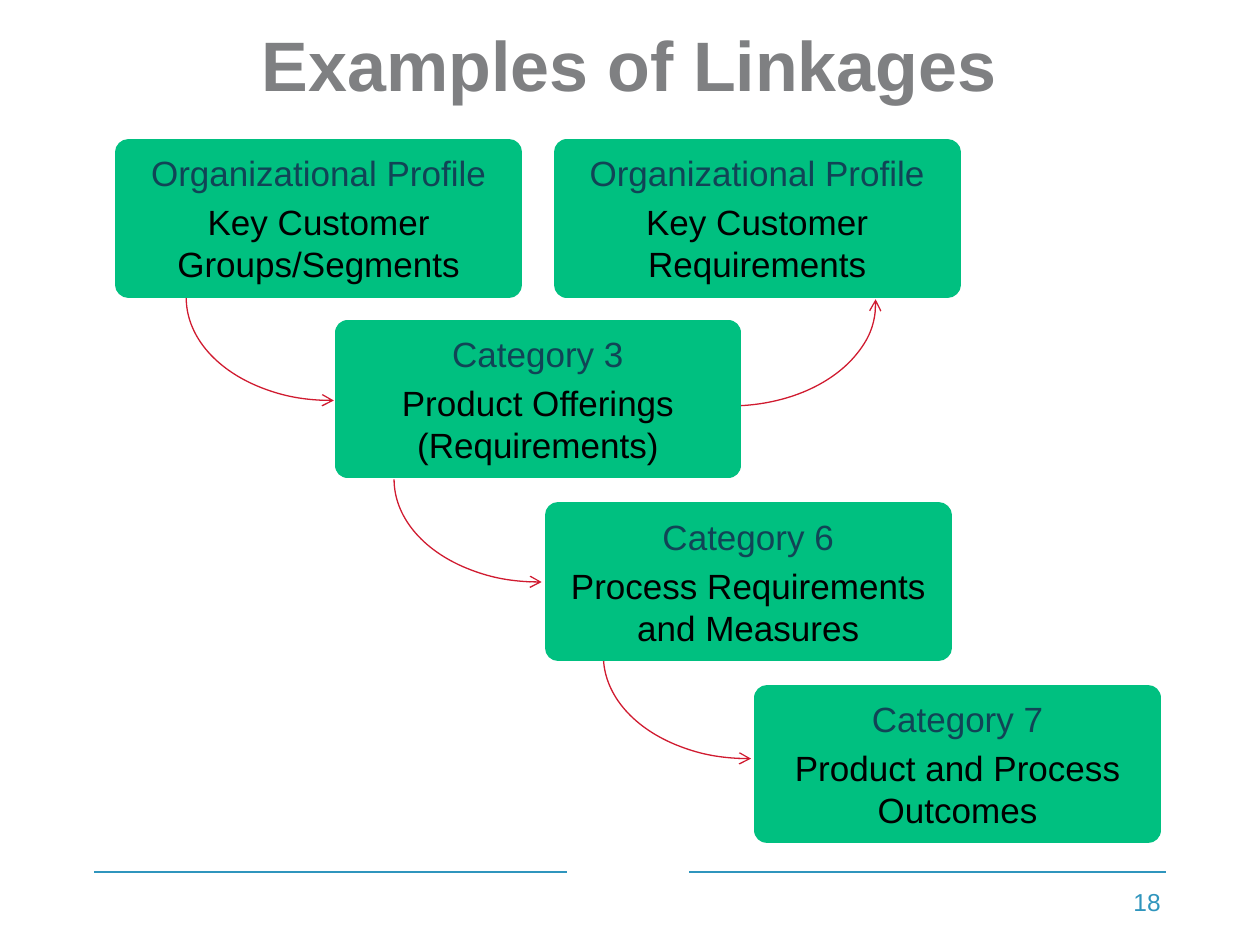
from lxml import etree
from pptx import Presentation
from pptx.dml.color import RGBColor
from pptx.enum.shapes import MSO_CONNECTOR, MSO_SHAPE
from pptx.enum.text import MSO_ANCHOR, PP_ALIGN
from pptx.oxml.ns import qn
from pptx.util import Cm, Pt

RECTANGLE = MSO_SHAPE.RECTANGLE
ARC = MSO_SHAPE.ARC
STRAIGHT = MSO_CONNECTOR.STRAIGHT
CENTER, RIGHT = PP_ALIGN.CENTER, PP_ALIGN.RIGHT
MIDDLE, BOTTOM = MSO_ANCHOR.MIDDLE, MSO_ANCHOR.BOTTOM

GRAY = RGBColor(0x7F, 0x80, 0x82)
GREEN = RGBColor(0x00, 0xC0, 0x80)
NAVY = RGBColor(0x11, 0x44, 0x56)
BLACK = RGBColor(0x00, 0x00, 0x00)
RED = RGBColor(0xD0, 0x1B, 0x30)
BLUE = RGBColor(0x2F, 0x95, 0xBD)

BOX_SIZE = Cm(7.67), Cm(2.67)
ARC_SIZE = Cm(4.14), Cm(5.87)

STAGES = [
    (2.59, 3.07, "Organizational Profile", "Key Customer Groups/Segments"),
    (11.43, 3.07, "Organizational Profile", "Key Customer Requirements"),
    (7.01, 6.71, "Category 3", "Product Offerings (Requirements)"),
    (11.25, 10.39, "Category 6", "Process Requirements and Measures"),
    (15.47, 14.07, "Category 7", "Product and Process Outcomes"),
]
FORWARD_LINKS = [(4.62, 3.07), (8.81, 6.73), (13.03, 10.29)]
FOOTER_RULES = [(1.9, 11.43), (13.89, 23.5)]


def write(paragraph, text, *, size=20, color=BLACK, bold=False,
          align=CENTER, before=None):
    paragraph.alignment = align
    if before is not None:
        paragraph.space_before = Pt(before)
    run = paragraph.add_run()
    run.text = text
    run.font.name = "Arial"
    run.font.size = Pt(size)
    run.font.bold = bold
    run.font.color.rgb = color


class LinkageSlide:
    def __init__(self, deck):
        self.slide = deck.slides.add_slide(deck.slide_layouts[5])
        self.shapes = self.slide.shapes

    def title(self, text):
        heading = self.shapes.title
        heading.left, heading.top = Cm(1.24), Cm(0.43)
        heading.width, heading.height = Cm(22.89), Cm(1.83)
        heading.text_frame.vertical_anchor = BOTTOM
        write(heading.text_frame.paragraphs[0], text,
              size=40, color=GRAY, bold=True)

    def stage(self, left, top, source, topic):
        box = self.shapes.add_shape(RECTANGLE, Cm(left), Cm(top), *BOX_SIZE)
        box.shadow.inherit = False
        box.fill.solid()
        box.fill.fore_color.rgb = GREEN
        box.line.color.rgb = GREEN
        box.line.width = Pt(15)
        etree.SubElement(box.line._get_or_add_ln(), qn("a:round"))
        frame = box.text_frame
        frame.word_wrap = True
        frame.vertical_anchor = MIDDLE
        frame.margin_left = frame.margin_right = Cm(0.1)
        write(frame.paragraphs[0], source, color=NAVY)
        write(frame.add_paragraph(), topic, before=4)

    def link(self, left, top, *, rotation, flips, arrow_end, angles):
        curve = self.shapes.add_shape(ARC, Cm(left), Cm(top), *ARC_SIZE)
        curve.shadow.inherit = False
        curve.fill.background()
        curve.rotation = rotation
        for index, angle in enumerate(angles):
            curve.adjustments[index] = angle
        xfrm = curve.element.spPr.find(qn("a:xfrm"))
        for flip in flips:
            xfrm.set(flip, "1")
        curve.line.color.rgb = RED
        curve.line.width = Pt(0.75)
        etree.SubElement(curve.line._get_or_add_ln(), qn(arrow_end),
                         type="arrow")

    def rule(self, start, end, top):
        line = self.shapes.add_connector(
            STRAIGHT, Cm(start), Cm(top), Cm(end), Cm(top))
        line.line.color.rgb = BLUE
        line.line.width = Pt(0.75)
        etree.SubElement(line.element.spPr, qn("a:effectLst"))

    def page_number(self, text):
        box = self.shapes.add_textbox(Cm(18.14), Cm(17.75), Cm(5.51), Cm(0.84))
        box.text_frame.word_wrap = True
        box.text_frame.vertical_anchor = MIDDLE
        write(box.text_frame.paragraphs[0], text,
              size=14, color=BLUE, align=RIGHT)


def main():
    deck = Presentation()
    deck.slide_width, deck.slide_height = Cm(25.4), Cm(19.05)
    linkages = LinkageSlide(deck)
    for start, end in FOOTER_RULES:
        linkages.rule(start, end, 17.58)
    linkages.title("Examples of Linkages")
    for left, top in FORWARD_LINKS:
        linkages.link(left, top, rotation=90, flips=["flipV"],
                      arrow_end="a:tailEnd", angles=(162, 0.66))
    linkages.link(12.65, 3.18, rotation=270, flips=["flipH", "flipV"],
                  arrow_end="a:headEnd", angles=(161.05, 1.29))
    linkages.page_number("18")
    for stage in STAGES:
        linkages.stage(*stage)
    deck.save("out.pptx")


if __name__ == "__main__":
    main()
